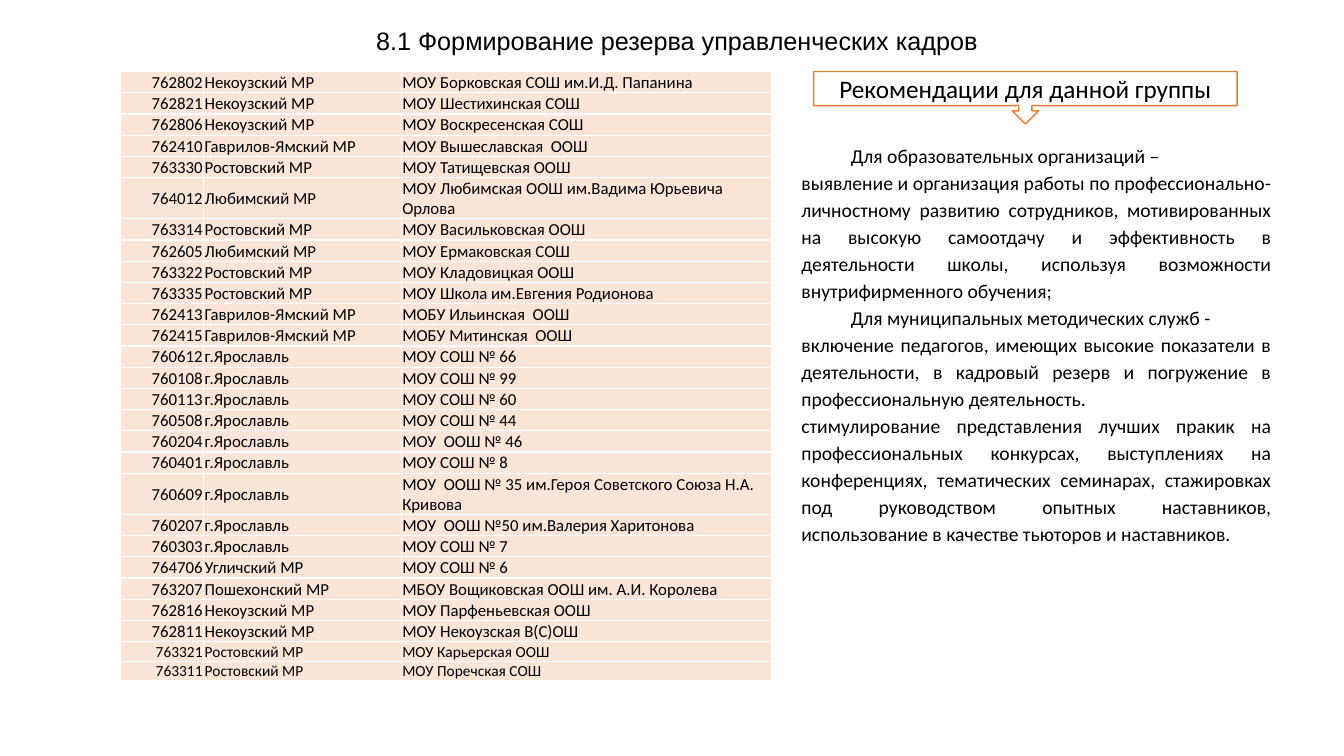
from lxml.etree import SubElement
from pptx import Presentation
from pptx.dml.color import RGBColor
from pptx.enum.shapes import MSO_SHAPE as Shape
from pptx.enum.text import MSO_ANCHOR as Anchor, MSO_AUTO_SIZE as AutoSize, PP_ALIGN as Align
from pptx.oxml.ns import qn
from pptx.util import Inches, Pt

TITLE = "8.1 Формирование резерва управленческих кадров"
CALLOUT = "Рекомендации для данной группы"
COLORS = {"text": "000000", "paper": "FFFFFF", "accent": "ED7D31", "cell": "FBE5D6"}

SCHOOLS = [
    ("762802", "Некоузский МР", "МОУ Борковская СОШ им.И.Д. Папанина"),
    ("762821", "Некоузский МР", "МОУ Шестихинская СОШ"),
    ("762806", "Некоузский МР", "МОУ Воскресенская СОШ"),
    ("762410", "Гаврилов-Ямский МР", "МОУ Вышеславская  ООШ"),
    ("763330", "Ростовский МР", "МОУ Татищевская ООШ"),
    ("764012", "Любимский МР", "МОУ Любимская ООШ им.Вадима Юрьевича Орлова"),
    ("763314", "Ростовский МР", "МОУ Васильковская ООШ"),
    ("762605", "Любимский МР", "МОУ Ермаковская СОШ"),
    ("763322", "Ростовский МР", "МОУ Кладовицкая ООШ"),
    ("763335", "Ростовский МР", "МОУ Школа им.Евгения Родионова"),
    ("762413", "Гаврилов-Ямский МР", "МОБУ Ильинская  ООШ"),
    ("762415", "Гаврилов-Ямский МР", "МОБУ Митинская  ООШ"),
    ("760612", "г.Ярославль", "МОУ СОШ № 66"),
    ("760108", "г.Ярославль", "МОУ СОШ № 99"),
    ("760113", "г.Ярославль", "МОУ СОШ № 60"),
    ("760508", "г.Ярославль", "МОУ СОШ № 44"),
    ("760204", "г.Ярославль", "МОУ  ООШ № 46"),
    ("760401", "г.Ярославль", "МОУ СОШ № 8"),
    ("760609", "г.Ярославль", "МОУ  ООШ № 35 им.Героя Советского Союза Н.А. Кривова"),
    ("760207", "г.Ярославль", "МОУ  ООШ №50 им.Валерия Харитонова"),
    ("760303", "г.Ярославль", "МОУ СОШ № 7"),
    ("764706", "Угличский МР", "МОУ СОШ № 6"),
    ("763207", "Пошехонский МР", "МБОУ Вощиковская ООШ им. А.И. Королева"),
    ("762816", "Некоузский МР", "МОУ Парфеньевская ООШ"),
    ("762811", "Некоузский МР", "МОУ Некоузская В(С)ОШ"),
    ("763321", "Ростовский МР", "МОУ Карьерская ООШ"),
    ("763311", "Ростовский МР", "МОУ Поречская СОШ"),
]
COLUMN_WIDTHS = (0.83, 1.96, 3.67)
ROW_HEIGHT, TALL_ROW_HEIGHT = 0.19, 0.25
LONG_NAME = 40
SMALL_ROWS = 2

ADVICE = [
    ("Для образовательных организаций –", 0, 0.49),
    ("выявление и организация работы по профессионально-личностному развитию сотрудников, "
     "мотивированных на высокую самоотдачу и эффективность в деятельности школы, "
     "используя возможности внутрифирменного обучения;", 0, 0),
    ("Для муниципальных методических служб -", 0.49, 0),
    ("включение педагогов, имеющих высокие показатели в деятельности, в кадровый резерв "
     "и погружение в профессиональную деятельность.", 0, 0),
    ("стимулирование представления лучших пракик на профессиональных конкурсах, "
     "выступлениях на конференциях, тематических семинарах, стажировках под руководством "
     "опытных наставников, использование в качестве тьюторов и наставников.", 0, 0),
]


def color(name):
    return RGBColor.from_string(COLORS[name])


def write(para, text, size, align=Align.LEFT, font="Calibri"):
    para.alignment = align
    span = para.add_run()
    span.text = text
    span.font.size = Pt(size)
    span.font.name = font
    span.font.color.rgb = color("text")


def place(shape, left, top, width, height):
    shape.left, shape.top = Inches(left), Inches(top)
    shape.width, shape.height = Inches(width), Inches(height)


def add_borders(cell):
    properties = cell._tc.get_or_add_tcPr()
    for side in ("a:lnL", "a:lnR", "a:lnT", "a:lnB"):
        line = SubElement(properties, qn(side), w=str(Pt(1)))
        fill = SubElement(line, qn("a:solidFill"))
        SubElement(fill, qn("a:srgbClr"), val=COLORS["paper"])


def add_title(page):
    title = page.shapes.title
    place(title, 3.63, 0.2, 6.28, 0.4)
    frame = title.text_frame
    frame.word_wrap = False
    frame.auto_size = AutoSize.SHAPE_TO_FIT_TEXT
    frame.vertical_anchor = Anchor.TOP
    write(frame.paragraphs[0], TITLE, 18, font="Arial")


def add_callout(page):
    callout = page.shapes.add_shape(
        Shape.DOWN_ARROW_CALLOUT, Inches(8.07), Inches(0.71), Inches(4.2), Inches(0.52))
    callout.shadow.inherit = False
    callout.fill.solid()
    callout.fill.fore_color.rgb = color("paper")
    callout.line.color.rgb = color("accent")
    callout.line.width = Pt(1)
    callout.text_frame.vertical_anchor = Anchor.MIDDLE
    write(callout.text_frame.paragraphs[0], CALLOUT, 18, Align.CENTER)


def add_schools(page):
    heights = [TALL_ROW_HEIGHT if len(name) > LONG_NAME else ROW_HEIGHT for _, _, name in SCHOOLS]
    table = page.shapes.add_table(
        len(SCHOOLS), len(COLUMN_WIDTHS), Inches(1.19), Inches(0.71),
        Inches(sum(COLUMN_WIDTHS)), Inches(sum(heights))).table
    table.first_row = table.horz_banding = False
    for column, width in zip(table.columns, COLUMN_WIDTHS):
        column.width = Inches(width)
    for index, (school, height) in enumerate(zip(SCHOOLS, heights)):
        table.rows[index].height = Inches(height)
        size = 12 if index < len(SCHOOLS) - SMALL_ROWS else 11
        for position, text in enumerate(school):
            cell = table.cell(index, position)
            add_borders(cell)
            cell.fill.solid()
            cell.fill.fore_color.rgb = color("cell")
            cell.margin_left = cell.margin_right = cell.margin_top = Inches(0.01)
            cell.margin_bottom = 0
            cell.vertical_anchor = Anchor.MIDDLE
            align = Align.RIGHT if position == 0 else Align.LEFT
            write(cell.text_frame.paragraphs[0], text, size, align)


def add_advice(page):
    box = page.shapes.add_textbox(Inches(7.85), Inches(1.34), Inches(4.86), Inches(4.17))
    frame = box.text_frame
    frame.word_wrap = True
    frame.auto_size = AutoSize.SHAPE_TO_FIT_TEXT
    for index, (text, margin, indent) in enumerate(ADVICE):
        para = frame.add_paragraph() if index else frame.paragraphs[0]
        properties = para._p.get_or_add_pPr()
        properties.set("marL", str(Inches(margin)))
        properties.set("indent", str(Inches(indent)))
        para.line_spacing = 1.15
        write(para, text, 14, Align.JUSTIFY)


def main():
    deck = Presentation()
    deck.slide_width, deck.slide_height = Inches(13.33), Inches(7.5)
    page = deck.slides.add_slide(deck.slide_layouts[5])
    add_callout(page)
    add_title(page)
    add_schools(page)
    add_advice(page)
    deck.save("out.pptx")


if __name__ == "__main__":
    main()
